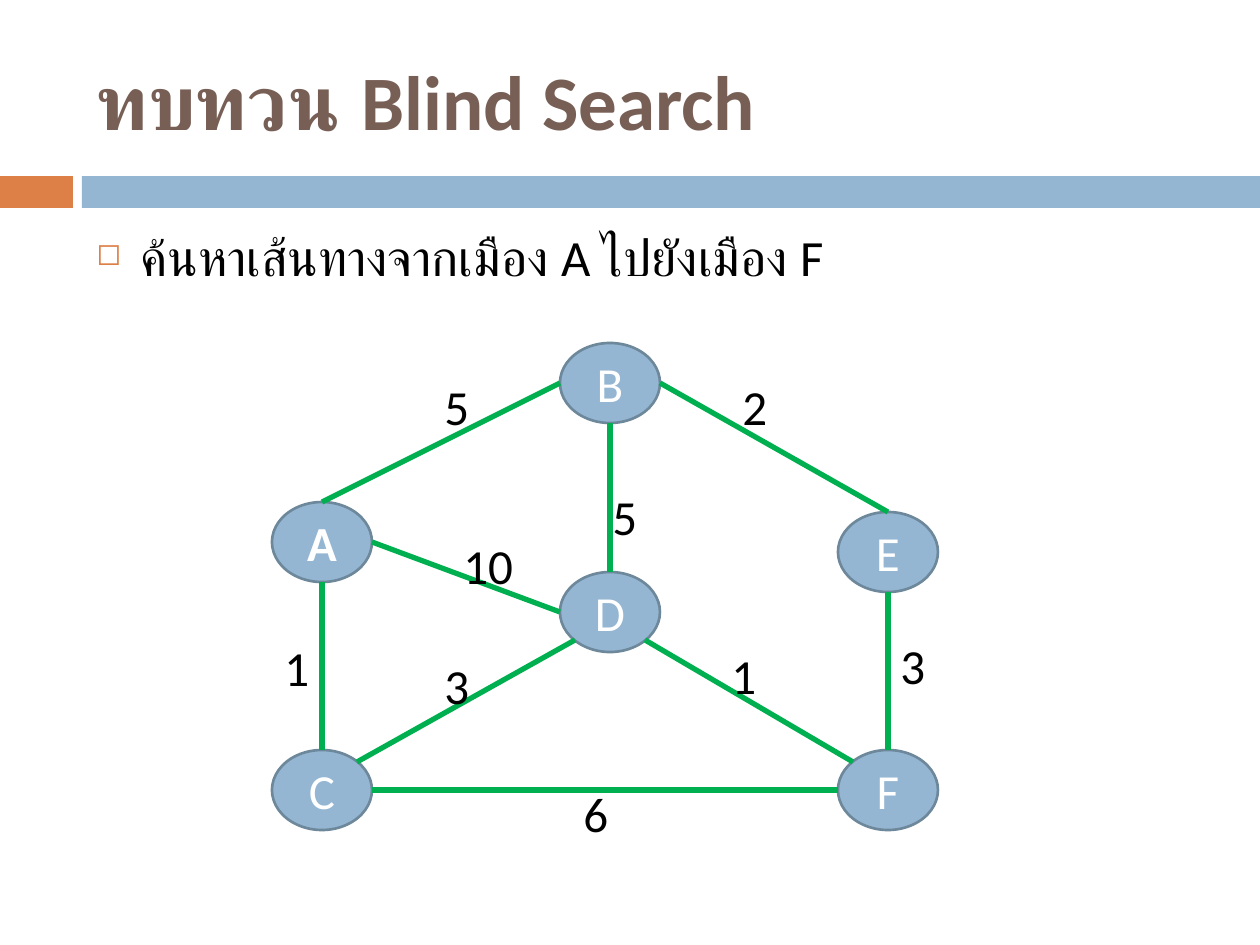
"""Build a slide reviewing blind search on a weighted graph of cities."""
from math import cos, radians, sin

from lxml.etree import SubElement
from pptx import Presentation
from pptx.dml.color import RGBColor
from pptx.enum.shapes import MSO_CONNECTOR as Connector, MSO_SHAPE as Shape
from pptx.enum.text import MSO_ANCHOR as Anchor, PP_ALIGN as Align
from pptx.oxml.ns import qn
from pptx.util import Emu, Pt

ORANGE = RGBColor(0xDD, 0x80, 0x47)
BLUE = RGBColor(0x94, 0xB6, 0xD2)
OUTLINE = RGBColor(0x6D, 0x87, 0x9B)
GREEN = RGBColor(0x00, 0xB0, 0x50)
BROWN = RGBColor(0x77, 0x5F, 0x55)
BLACK = RGBColor(0, 0, 0)
WHITE = RGBColor(255, 255, 255)
FONT = "Calibri"
SCALE = 914400 / 126
NODE_WIDTH, NODE_HEIGHT = 100, 80


def emu(*lengths):
    return [Emu(round(length * SCALE)) for length in lengths]


def style(paragraph, size, color, bold=False):
    paragraph.font.name = FONT
    paragraph.font.size = Pt(size)
    paragraph.font.color.rgb = color
    paragraph.font.bold = bold


presentation = Presentation()
presentation.slide_width, presentation.slide_height = emu(1260, 945)
slide = presentation.slides.add_slide(presentation.slide_layouts[5])
shapes = slide.shapes

for left, width, color in [(0, 73, ORANGE), (82, 1178, BLUE)]:
    bar = shapes.add_shape(Shape.RECTANGLE, *emu(left, 176, width, 32))
    bar.shadow.inherit = False
    bar.fill.solid()
    bar.fill.fore_color.rgb = color
    bar.line.fill.background()

title = shapes.title
title.left, title.top, title.width, title.height = emu(84, 32, 1124, 136)
title.text_frame.text = "ทบทวน Blind Search"
title.text_frame.vertical_anchor = Anchor.MIDDLE
paragraph = title.text_frame.paragraphs[0]
paragraph.alignment = Align.LEFT
style(paragraph, 44, BROWN, bold=True)

body = shapes.add_textbox(*emu(84, 220, 1124, 620))
body.text_frame.word_wrap = True
paragraph = body.text_frame.paragraphs[0]
paragraph.text = "ค้นหาเส้นทางจากเมือง A ไปยังเมือง F"
properties = paragraph._p.get_or_add_pPr()
indent = emu(44)[0]
properties.set("marL", str(indent))
properties.set("indent", str(-indent))
bullet_color = SubElement(properties, qn("a:buClr"))
SubElement(bullet_color, qn("a:srgbClr"), val=str(ORANGE))
SubElement(properties, qn("a:buSzPct"), val="60000")
SubElement(properties, qn("a:buChar"), char="◻")
style(paragraph, 29, BLACK)

cities = {
    "A": (272, 502), "B": (560, 343), "D": (560, 572),
    "C": (272, 750), "F": (838, 750), "E": (838, 512),
}
for name, (left, top) in cities.items():
    city = shapes.add_shape(Shape.OVAL, *emu(left, top, NODE_WIDTH, NODE_HEIGHT))
    city.shadow.inherit = False
    city.fill.solid()
    city.fill.fore_color.rgb = BLUE
    city.line.color.rgb = OUTLINE
    city.line.width = Pt(1.5)
    city.text_frame.text = name
    city.text_frame.vertical_anchor = Anchor.MIDDLE
    paragraph = city.text_frame.paragraphs[0]
    paragraph.alignment = Align.CENTER
    style(paragraph, 28, WHITE, bold=name == "A")

roads = [
    ("B", 0, "E", 270), ("E", 90, "F", 270), ("F", 180, "C", 0),
    ("C", 270, "A", 90), ("A", 270, "B", 180), ("B", 90, "D", 270),
    ("A", 0, "D", 180), ("C", 315, "D", 135), ("D", 45, "F", 225),
]
for start, start_angle, end, end_angle in roads:
    points = []
    for name, angle in [(start, start_angle), (end, end_angle)]:
        left, top = cities[name]
        points.append(round(left + NODE_WIDTH / 2 * (1 + cos(radians(angle)))))
        points.append(round(top + NODE_HEIGHT / 2 * (1 + sin(radians(angle)))))
    road = shapes.add_connector(Connector.STRAIGHT, *emu(*points))
    road.line.color.rgb = GREEN
    road.line.width = Pt(3)
    SubElement(road._element.spPr, qn("a:effectLst"))

costs = [
    ("5", 432, 370), ("2", 730, 370), ("3", 888, 629),
    ("3", 432, 649), ("1", 272, 631), ("1", 719, 639),
    ("5", 600, 480), ("6", 571, 777), ("10", 451, 529),
]
for cost, left, top in costs:
    label = shapes.add_textbox(*emu(left, top, 100 if len(cost) > 1 else 69, 72))
    label.text_frame.word_wrap = True
    label.text_frame.text = cost
    style(label.text_frame.paragraphs[0], 28, BLACK)

presentation.save("out.pptx")
